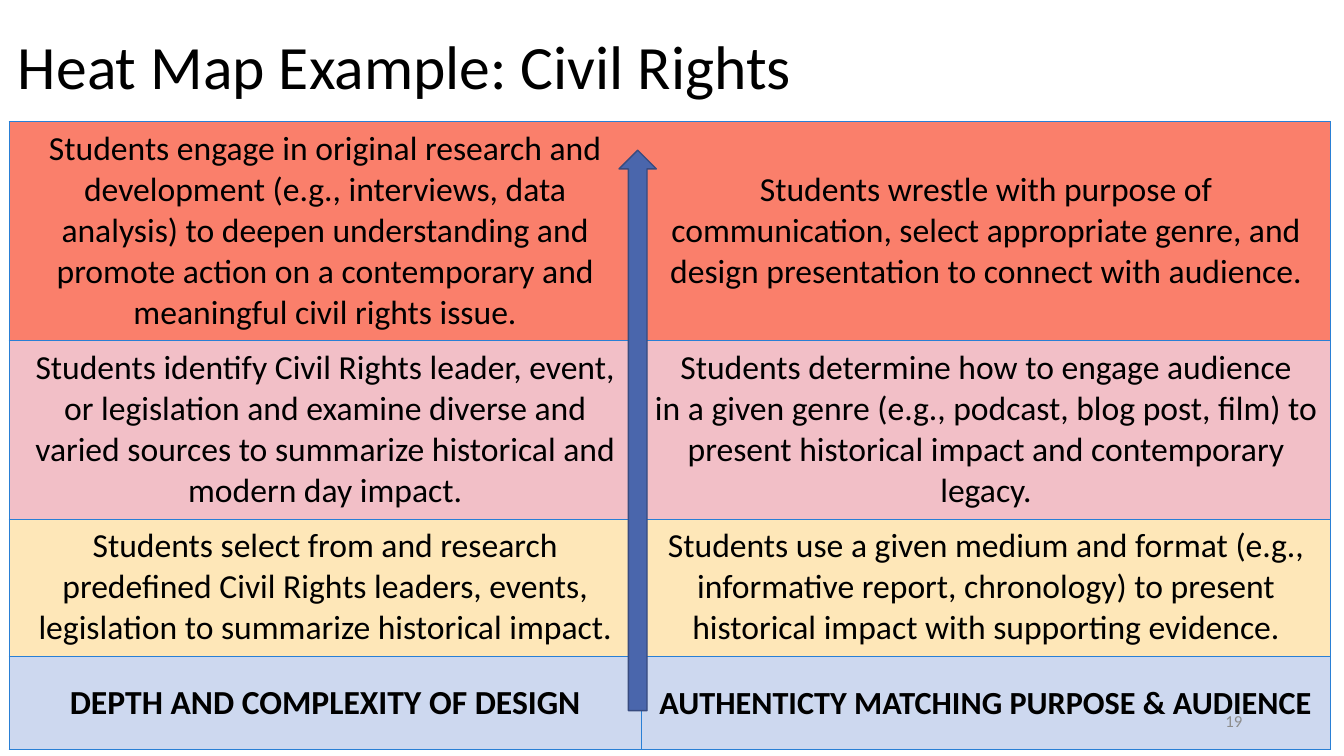
"""Build a heat map slide of student tasks on civil rights."""
from pptx import Presentation, util as u
from pptx.dml.color import RGBColor
from pptx.enum import shapes, text
from pptx.oxml import parse_xml
from pptx.oxml.ns import nsdecls

TITLE = "Heat Map Example: Civil Rights"
PAGE_NUMBER = "19"
FONT = "Calibri"
BORDER = "297FD5"
COLUMN_WIDTHS = [6.27, 6.84]
MIDDLE, TOP = text.MSO_ANCHOR.MIDDLE, text.MSO_ANCHOR.TOP
LEVELS = [
    {"height": 2.17, "fill": "FA7F6B", "anchor": MIDDLE, "bold": False, "sizes": (24, 24), "texts": (
        "Students engage in original research and development (e.g., interviews, data\v"
        "analysis) to deepen understanding and promote action on a contemporary and "
        "meaningful civil rights issue.",
        "Students wrestle with purpose of communication, select appropriate genre, and "
        "design presentation to connect with audience.")},
    {"height": 1.77, "fill": "F2BFC7", "anchor": MIDDLE, "bold": False, "sizes": (24, 24), "texts": (
        "Students identify Civil Rights leader, event,\vor legislation and examine diverse and\v"
        "varied sources to summarize historical and\vmodern day impact.",
        "Students determine how to engage audience\vin a given genre (e.g., podcast, blog post, "
        "film) to present historical impact and contemporary legacy.")},
    {"height": 1.36, "fill": "FEE7B8", "anchor": TOP, "bold": False, "sizes": (24, 24), "texts": (
        "Students select from and research\vpredefined Civil Rights leaders, events, "
        "legislation to summarize historical impact.",
        "Students use a given medium and format (e.g., informative report, chronology) to "
        "present historical impact with supporting evidence.")},
    {"height": 0.93, "fill": "CDD8EF", "anchor": MIDDLE, "bold": True, "sizes": (24, 23), "texts": (
        "DEPTH AND COMPLEXITY OF DESIGN",
        "AUTHENTICTY MATCHING PURPOSE & AUDIENCE")},
]


def color(value):
    return RGBColor.from_string(value)


def write(frame, words, size, shade="000000", align=text.PP_ALIGN.LEFT, bold=False):
    frame.text = words
    frame.word_wrap = True
    para = frame.paragraphs[0]
    para.alignment = align
    for span in para.runs:
        span.font.name = FONT
        span.font.size = u.Pt(size)
        span.font.bold = bold
        span.font.color.rgb = color(shade)
    return para


def add_text(page, place, words, size, **style):
    box = page.shapes.add_textbox(*map(u.Inches, place))
    box.text_frame.vertical_anchor = MIDDLE
    return write(box.text_frame, words, size, **style)


def set_borders(cell, hidden):
    properties = cell._tc.get_or_add_tcPr()
    for side in ("L", "R", "T", "B"):
        paint = "<a:noFill/>" if side == hidden else (
            f'<a:solidFill><a:srgbClr val="{BORDER}"/></a:solidFill>')
        properties.append(parse_xml(
            f'<a:ln{side} {nsdecls("a")} w="{u.Pt(0.75)}">{paint}</a:ln{side}>'))


def add_heat_map(page):
    size = sum(COLUMN_WIDTHS), sum(level["height"] for level in LEVELS)
    frame = page.shapes.add_table(len(LEVELS), len(COLUMN_WIDTHS),
                                  *map(u.Inches, (0.09, 1.21, *size)))
    table = frame.table
    table.first_row = table.horz_banding = False
    for column, width in zip(table.columns, COLUMN_WIDTHS):
        column.width = u.Inches(width)
    for i, level in enumerate(LEVELS):
        table.rows[i].height = u.Inches(level["height"])
        for j, (words, points) in enumerate(zip(level["texts"], level["sizes"])):
            cell = table.cell(i, j)
            set_borders(cell, "RL"[j] if i == 0 else None)
            cell.fill.solid()
            cell.fill.fore_color.rgb = color(level["fill"])
            cell.vertical_anchor = level["anchor"]
            cell.margin_left = cell.margin_right = u.Inches(0.07)
            cell.margin_top = cell.margin_bottom = u.Inches(0.07)
            write(cell.text_frame, words, points, align=text.PP_ALIGN.CENTER, bold=level["bold"])


def add_arrow(page):
    arrow = page.shapes.add_shape(shapes.MSO_SHAPE.DOWN_ARROW,
                                  *map(u.Inches, (6.14, 1.49, 0.37, 5.56)))
    arrow.rotation = 180
    arrow.shadow.inherit = False
    arrow.fill.solid()
    arrow.fill.fore_color.rgb = color("4A66AC")
    arrow.line.color.rgb = color("374B7F")
    arrow.line.width = u.Pt(1)


def main():
    deck = Presentation()
    deck.slide_width, deck.slide_height = u.Inches(13.33), u.Inches(7.5)
    page = deck.slides.add_slide(deck.slide_layouts[6])
    title = add_text(page, (0.08, -0.04, 11.5, 1.45), TITLE, 44)
    title.line_spacing = 0.9
    add_heat_map(page)
    add_text(page, (9.42, 6.95, 3, 0.4), PAGE_NUMBER, 12,
             shade="8C8C8C", align=text.PP_ALIGN.RIGHT)
    add_arrow(page)
    deck.save("out.pptx")


if __name__ == "__main__":
    main()
